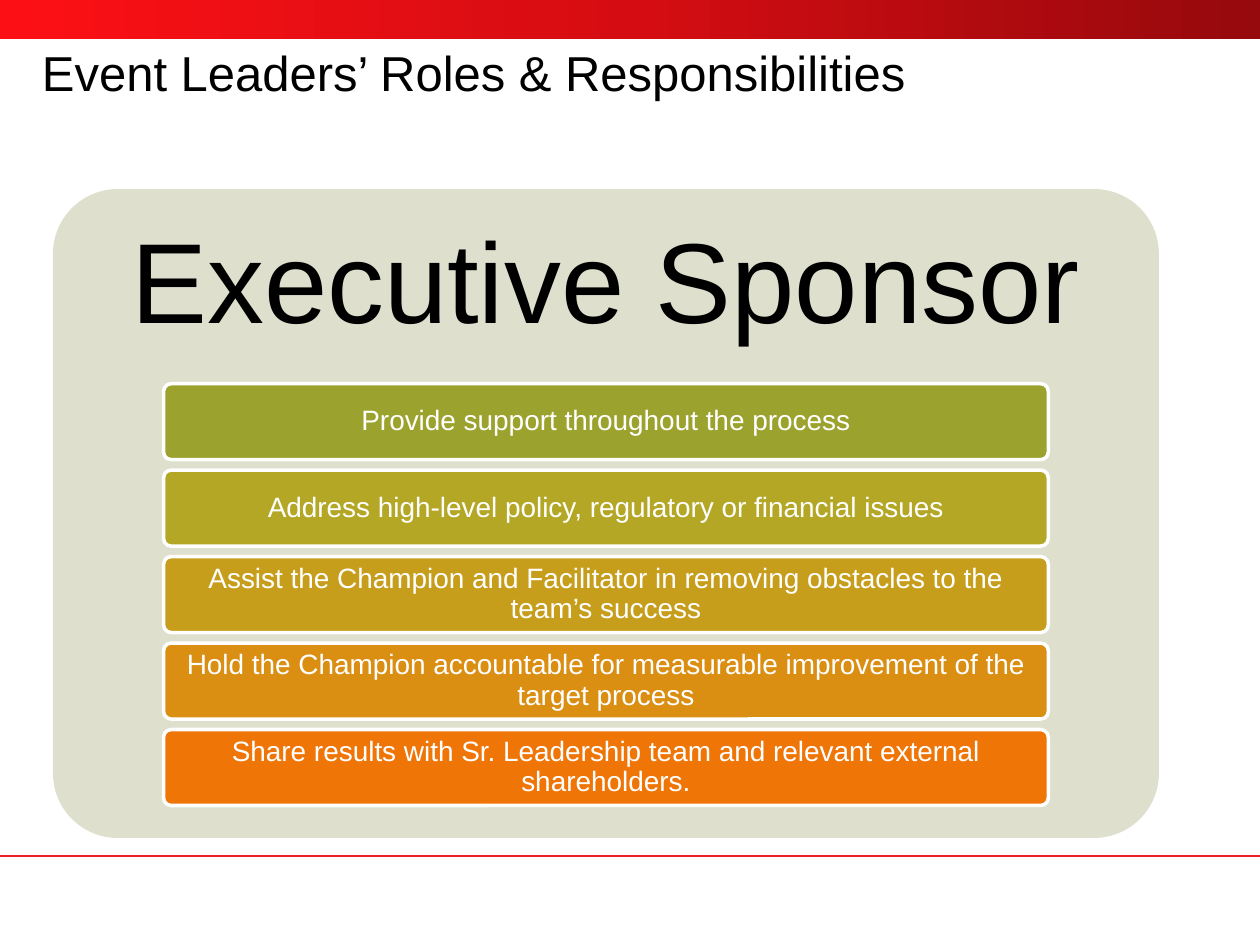
from copy import deepcopy

from pptx import Presentation
from pptx.dml.color import RGBColor
from pptx.enum.shapes import MSO_CONNECTOR, MSO_SHAPE
from pptx.enum.text import MSO_ANCHOR, PP_ALIGN
from pptx.oxml.ns import qn
from pptx.oxml.xmlchemy import OxmlElement
from pptx.util import Emu, Pt

PX = 914400 / 126
FONT = "Arial"
COLORS = {
    "bright_red": "FC1015",
    "red": "D50D12",
    "dark_red": "96090D",
    "rule": "ED1F24",
    "panel": "DEE0CD",
    "black": "000000",
    "white": "FFFFFF",
    "olive": "9CA22E",
    "moss": "B4A726",
    "gold": "C79E1C",
    "amber": "DA8E12",
    "orange": "EF7507",
}
DUTIES = [
    ("Provide support throughout the process", "olive"),
    ("Address high-level policy, regulatory or financial issues", "moss"),
    ("Assist the Champion and Facilitator in removing obstacles to the team’s success", "gold"),
    ("Hold the Champion accountable for measurable improvement of the target process", "amber"),
    ("Share results with Sr. Leadership team and relevant external shareholders.", "orange"),
]


def px(*lengths):
    """Turn pixel lengths into EMU."""
    return [Emu(round(length * PX)) for length in lengths]


def rgb(name):
    """Look up a named colour."""
    return RGBColor.from_string(COLORS[name])


def write(shape, text, size, color, inset_x=0, inset_y=0, align=PP_ALIGN.CENTER, anchor=MSO_ANCHOR.MIDDLE):
    """Put one formatted paragraph into a shape."""
    frame = shape.text_frame
    frame.word_wrap = True
    frame.vertical_anchor = anchor
    frame.margin_left, frame.margin_right = px(inset_x, inset_x)
    frame.margin_top, frame.margin_bottom = px(inset_y, inset_y)
    frame.text = text
    para = frame.paragraphs[0]
    para.alignment = align
    para.line_spacing = 0.9
    para.font.name = FONT
    para.font.size = Pt(size)
    para.font.color.rgb = rgb(color)


def add_rounded(page, box, color):
    """Add a filled rounded rectangle without outline."""
    shape = page.shapes.add_shape(MSO_SHAPE.ROUNDED_RECTANGLE, *px(*box))
    shape.shadow.inherit = False
    shape.adjustments[0] = 0.1
    shape.fill.solid()
    shape.fill.fore_color.rgb = rgb(color)
    shape.line.fill.background()
    return shape


def add_banner(page, box):
    """Add the red gradient band."""
    band = page.shapes.add_shape(MSO_SHAPE.RECTANGLE, *px(*box))
    band.shadow.inherit = False
    band.line.fill.background()
    band.fill.gradient()
    band.fill.gradient_angle = 0
    stops = band._element.spPr.find(qn("a:gradFill")).find(qn("a:gsLst"))
    stops.insert(1, deepcopy(stops[0]))
    names = ("bright_red", "red", "dark_red")
    for stop, position, name in zip(band.fill.gradient_stops, (0, 0.5, 1), names):
        stop.position = position
        stop.color.rgb = rgb(name)


def add_rule(page, left, top, width):
    """Add the thin red footer line."""
    rule = page.shapes.add_connector(MSO_CONNECTOR.STRAIGHT, *px(left, top, left + width, top))
    rule.line.color.rgb = rgb("rule")
    rule.line.width = Pt(1)
    rule._element.spPr.append(OxmlElement("a:effectLst"))


def add_title(page, box, text):
    """Add the slide title."""
    title = page.shapes.add_textbox(*px(*box))
    write(title, text, 28, "black", align=PP_ALIGN.LEFT, anchor=MSO_ANCHOR.TOP)


def add_role_panel(page, box, role, duties):
    """Add a role heading above an evenly spaced stack of duties."""
    left, top, width, height = box
    add_rounded(page, box, "panel")
    heading = page.shapes.add_textbox(*px(left, top, width, height * 0.3))
    write(heading, role, 65, "black", 34, 34)

    duty_height = 76
    pitch = (height * 0.65 - duty_height) / (len(duties) - 1)
    for index, (text, color) in enumerate(duties):
        duty_top = top + height * 0.3 + index * pitch
        duty = add_rounded(page, (left + width * 0.1, duty_top, width * 0.8, duty_height), color)
        duty.line.color.rgb = rgb("white")
        duty.line.width = Pt(2)
        write(duty, text, 16, "white", 5, 4)


def main():
    """Build and save the deck."""
    deck = Presentation()
    deck.slide_width, deck.slide_height = px(1260, 945)
    page = deck.slides.add_slide(deck.slide_layouts[6])
    add_banner(page, (0, 0, 1260, 39))
    add_rule(page, 0, 856, 1260)
    add_title(page, (42, 49, 1018, 116), "Event Leaders’ Roles & Responsibilities")
    add_role_panel(page, (53, 189, 1106, 649), "Executive Sponsor", DUTIES)
    deck.save("out.pptx")


if __name__ == "__main__":
    main()
